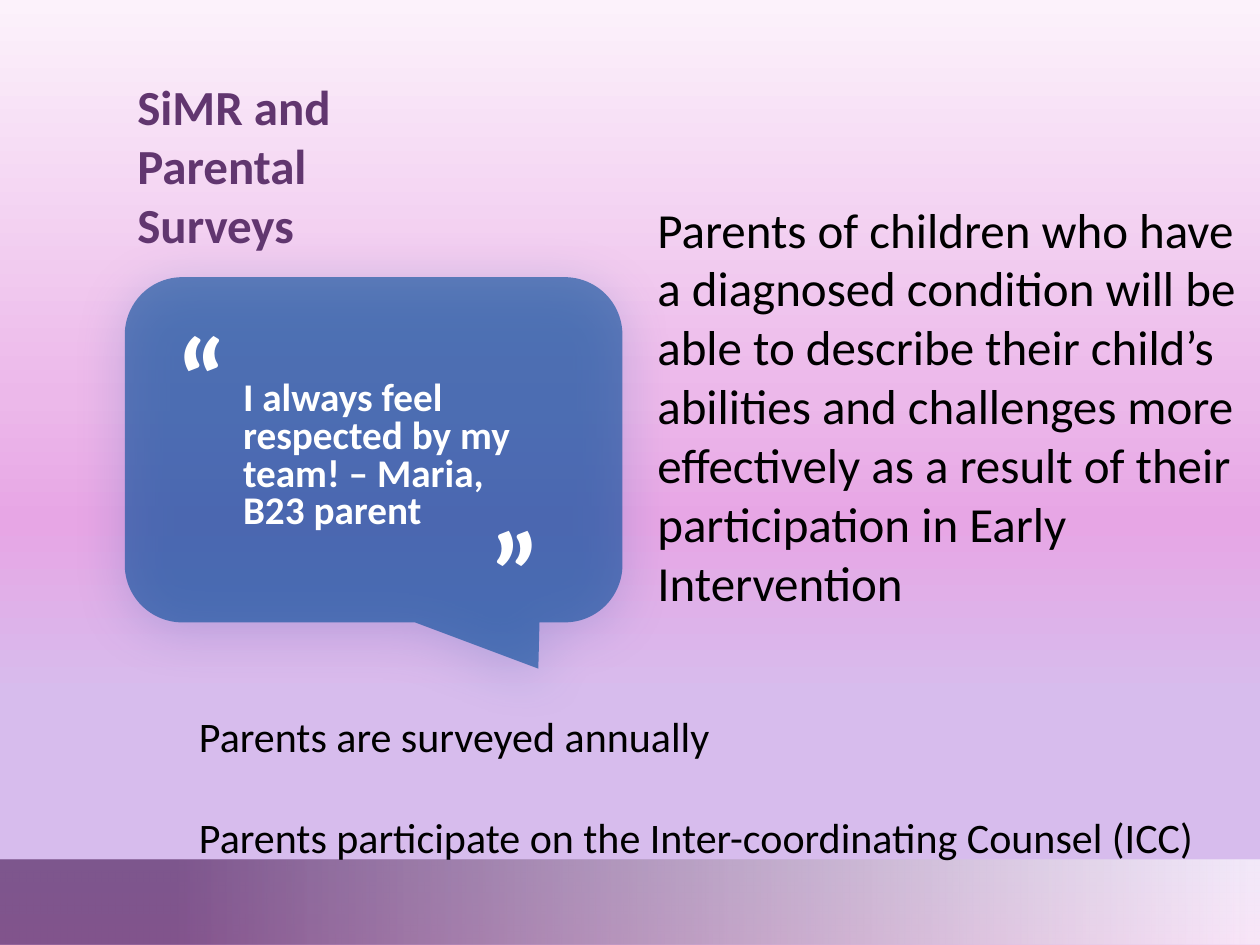
from lxml.etree import SubElement
from pptx import Presentation
from pptx.dml.color import RGBColor
from pptx.enum.shapes import MSO_SHAPE as Shape
from pptx.enum.text import MSO_ANCHOR as Anchor, MSO_AUTO_SIZE as AutoSize, PP_ALIGN as Align
from pptx.oxml.ns import qn
from pptx.util import Pt

COLORS = {
    "blue": "004A98",
    "purple": "61366F",
    "white": "FFFFFF",
    "black": "000000",
}
SKY = [(0, "FCF2FB", 100), (42, "ECB8EA", 100), (55, "E7A6E5", 100),
       (74, "D7BCED", 100), (90, "D7BCED", 100), (100, "EAB2E9", 100)]
FOOTER = [(14, COLORS["purple"], 75), (99, COLORS["white"], 66)]


def add_color(parent, color, opacity):
    tint = SubElement(parent, qn("a:srgbClr"), val=color)
    if opacity < 100:
        SubElement(tint, qn("a:alpha"), val=str(opacity * 1000))


def set_gradient(fill, owner, stops, angle):
    fill.gradient()
    fill.gradient_angle = angle
    stop_list = owner.find(".//" + qn("a:gsLst"))
    for old_stop in list(stop_list):
        stop_list.remove(old_stop)
    for position, color, opacity in stops:
        stop = SubElement(stop_list, qn("a:gs"), pos=str(position * 1000))
        add_color(stop, color, opacity)


def add_panel(slide, kind, box):
    panel = slide.shapes.add_shape(kind, *map(Pt, box))
    panel.shadow.inherit = False
    panel.line.fill.background()
    return panel


def add_bubble(slide, box):
    bubble = add_panel(slide, Shape.ROUNDED_RECTANGULAR_CALLOUT, box)
    for index, value in enumerate((0.331, 0.634, 0.167)):
        bubble.adjustments[index] = value
    bubble.fill.solid()
    bubble.fill.fore_color.rgb = RGBColor.from_string(COLORS["blue"])
    properties = bubble.element.spPr
    tint = properties.find(qn("a:solidFill")).find(qn("a:srgbClr"))
    SubElement(tint, qn("a:alpha"), val="60000")
    shadow = SubElement(properties.find(qn("a:effectLst")), qn("a:outerShdw"),
                        blurRad=str(Pt(31)), dist=str(Pt(5)), dir="5400000",
                        algn="t", rotWithShape="0")
    add_color(shadow, COLORS["blue"], 31)


def write_text(slide, text, box, size, holder=None, color="black", bold=False,
               spacing=None, gap=0, rotation=0, grow=False):
    holder = holder or slide.shapes.add_textbox(0, 0, 0, 0)
    holder.left, holder.top, holder.width, holder.height = map(Pt, box)
    holder.rotation = rotation
    frame = holder.text_frame
    frame.text = text
    frame.word_wrap = True
    frame.vertical_anchor = Anchor.TOP
    frame.auto_size = AutoSize.SHAPE_TO_FIT_TEXT if grow else AutoSize.NONE
    for index, paragraph in enumerate(frame.paragraphs):
        paragraph.alignment = Align.LEFT
        paragraph.line_spacing = spacing
        paragraph.space_before = Pt(gap if index else 0)
        for run in paragraph.runs:
            run.font.name = "Calibri"
            run.font.size = Pt(size)
            run.font.bold = bold
            run.font.color.rgb = RGBColor.from_string(COLORS[color])


def main():
    deck = Presentation()
    deck.slide_width, deck.slide_height = Pt(720), Pt(540)
    slide = deck.slides.add_slide(deck.slide_layouts[5])
    set_gradient(slide.background.fill, slide.element, SKY, 270)

    write_text(slide, "SiMR and Parental Surveys", (71.3, 40.3, 161.3, 108.7), 28,
               holder=slide.shapes.title, color="purple", bold=True, grow=True)

    add_bubble(slide, (71.3, 158.4, 284.4, 197.3))
    quote_style = dict(color="white", bold=True, spacing=0.8)
    write_text(slide, "I always feel respected by my team! – Maria, B23 parent",
               (131.8, 214.6, 177.1, 108), 22.4, **quote_style)
    for left, top, rotation in ((93.6, 186.5, 0), (240.5, 249.8, 180)):
        write_text(slide, "“", (left, top, 75.6, 79.2), 66.6,
                   rotation=rotation, **quote_style)

    footer = add_panel(slide, Shape.RECTANGLE, (0, 491, 720, 49))
    set_gradient(footer.fill, footer.element, FOOTER, 0)

    write_text(slide, "Parents of children who have a diagnosed condition will be able to "
               "describe their child’s abilities and challenges more effectively as a "
               "result of their participation in Early Intervention",
               (368.6, 110.2, 360, 244.8), 28, grow=True)
    write_text(slide, "Parents are surveyed annually\n"
               "Parents participate on the Inter-coordinating Counsel (ICC)",
               (106.6, 402.5, 591.8, 94.3), 24, gap=29, grow=True)
    deck.save("out.pptx")


if __name__ == "__main__":
    main()
